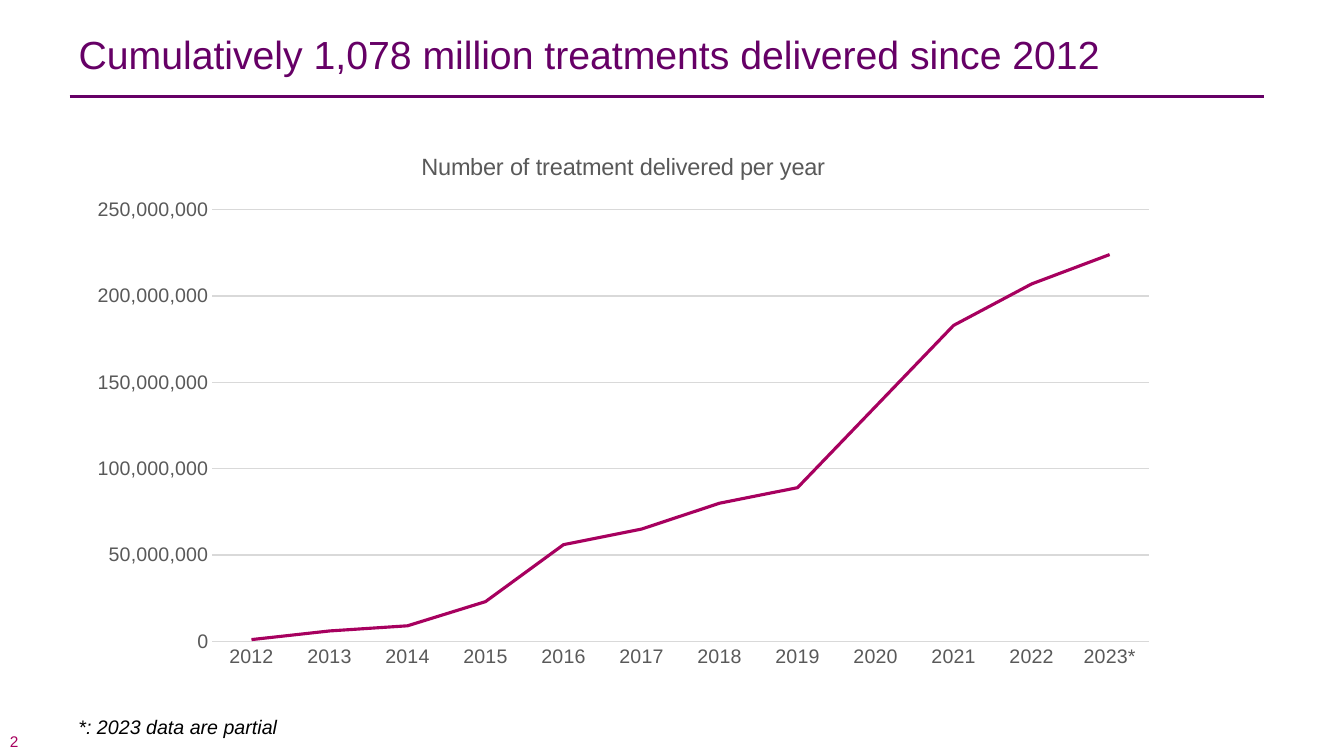
"""Build a slide with a line chart of treatments delivered per year."""
from lxml import etree
from pptx import Presentation
from pptx.chart.data import CategoryChartData
from pptx.dml.color import RGBColor
from pptx.enum import chart as chart_enum, shapes, text
from pptx.oxml import ns
from pptx.util import Inches, Pt

TITLE = "Cumulatively 1,078 million treatments delivered since 2012"
CHART_TITLE = "Number of treatment delivered per year"
FOOTNOTE = "*: 2023 data are partial"
SLIDE_NUMBER = "2"
MILLIONS_PER_YEAR = {
    "2012": 1, "2013": 6, "2014": 9, "2015": 23, "2016": 56, "2017": 65,
    "2018": 80, "2019": 89, "2020": 136, "2021": 183, "2022": 207, "2023*": 224,
}

FONT = "Arial"
PURPLE = RGBColor(0x66, 0x00, 0x66)
MAGENTA = RGBColor(0xA7, 0x00, 0x5F)
BLACK = RGBColor(0x00, 0x00, 0x00)
GRAY = RGBColor(0x59, 0x59, 0x59)
LIGHT_GRAY = RGBColor(0xD9, 0xD9, 0xD9)


def style_font(font, size, color):
    """Set the typeface, size and colour of a font."""
    font.name = FONT
    font.size = Pt(size)
    font.color.rgb = color


def write_text(shape, content, size, color, anchor=text.MSO_ANCHOR.TOP):
    """Write one left-aligned run and return its paragraph."""
    frame = shape.text_frame
    frame.word_wrap = True
    frame.auto_size = text.MSO_AUTO_SIZE.NONE
    frame.vertical_anchor = anchor
    paragraph = frame.paragraphs[0]
    paragraph.alignment = text.PP_ALIGN.LEFT
    run = paragraph.add_run()
    run.text = content
    style_font(run.font, size, color)
    return paragraph


def style_line(line, color, width):
    """Set the colour and width of a line."""
    line.color.rgb = color
    line.width = Pt(width)


def add_title(slide):
    """Fill the title placeholder and draw the rule below it."""
    title = slide.shapes.title
    title.left, title.top = Inches(0.68), Inches(0.36)
    title.width, title.height = Inches(12.08), Inches(0.75)
    paragraph = write_text(title, TITLE, 28, PURPLE)
    paragraph.line_spacing = Pt(26)
    rule = slide.shapes.add_connector(
        shapes.MSO_CONNECTOR.STRAIGHT,
        Inches(0.69), Inches(0.96), Inches(12.54), Inches(0.96))
    style_line(rule.line, PURPLE, 2)
    etree.SubElement(rule._element.spPr, ns.qn("a:effectLst"))


def add_treatment_chart(slide):
    """Add the line chart of yearly treatments."""
    data = CategoryChartData(number_format="#,##0")
    data.categories = list(MILLIONS_PER_YEAR)
    data.add_series(CHART_TITLE, [value * 1_000_000 for value in MILLIONS_PER_YEAR.values()])
    chart = slide.shapes.add_chart(
        chart_enum.XL_CHART_TYPE.LINE,
        Inches(0.75), Inches(1.3), Inches(10.86), Inches(5.43), data).chart
    style_font(chart.font, 14, BLACK)
    chart.has_legend = False
    chart.has_title = True
    chart.chart_title.include_in_layout = False
    title_run = chart.chart_title.text_frame.paragraphs[0].add_run()
    title_run.text = CHART_TITLE
    style_font(title_run.font, 16.8, GRAY)
    title_run.font.bold = False

    for axis in (chart.category_axis, chart.value_axis):
        axis.major_tick_mark = axis.minor_tick_mark = chart_enum.XL_TICK_MARK.NONE
        style_font(axis.tick_labels.font, 14, GRAY)
    style_line(chart.category_axis.format.line, LIGHT_GRAY, 0.75)
    value_axis = chart.value_axis
    value_axis.minimum_scale, value_axis.maximum_scale = 0, 250_000_000
    value_axis.major_unit = 50_000_000
    value_axis.tick_labels.number_format = "#,##0"
    value_axis.tick_labels.number_format_is_linked = False
    value_axis.format.line.fill.background()
    style_line(value_axis.major_gridlines.format.line, LIGHT_GRAY, 0.75)

    plot = chart.plots[0]
    plot.vary_by_categories = False
    series = plot.series[0]
    series.smooth = False
    series.marker.style = chart_enum.XL_MARKER_STYLE.NONE
    style_line(series.format.line, MAGENTA, 2.25)


def main():
    """Build and save the presentation."""
    presentation = Presentation()
    presentation.slide_width, presentation.slide_height = Inches(13.33), Inches(7.5)
    slide = presentation.slides.add_slide(presentation.slide_layouts[5])
    add_title(slide)
    add_treatment_chart(slide)
    footnote = slide.shapes.add_textbox(Inches(0.68), Inches(7.04), Inches(9.72), Inches(0.34))
    write_text(footnote, FOOTNOTE, 14, BLACK).runs[0].font.italic = True
    number = slide.shapes.add_textbox(Inches(0), Inches(7.26), Inches(1.06), Inches(0.18))
    write_text(number, SLIDE_NUMBER, 11, MAGENTA, text.MSO_ANCHOR.MIDDLE)
    presentation.save("out.pptx")


if __name__ == "__main__":
    main()
